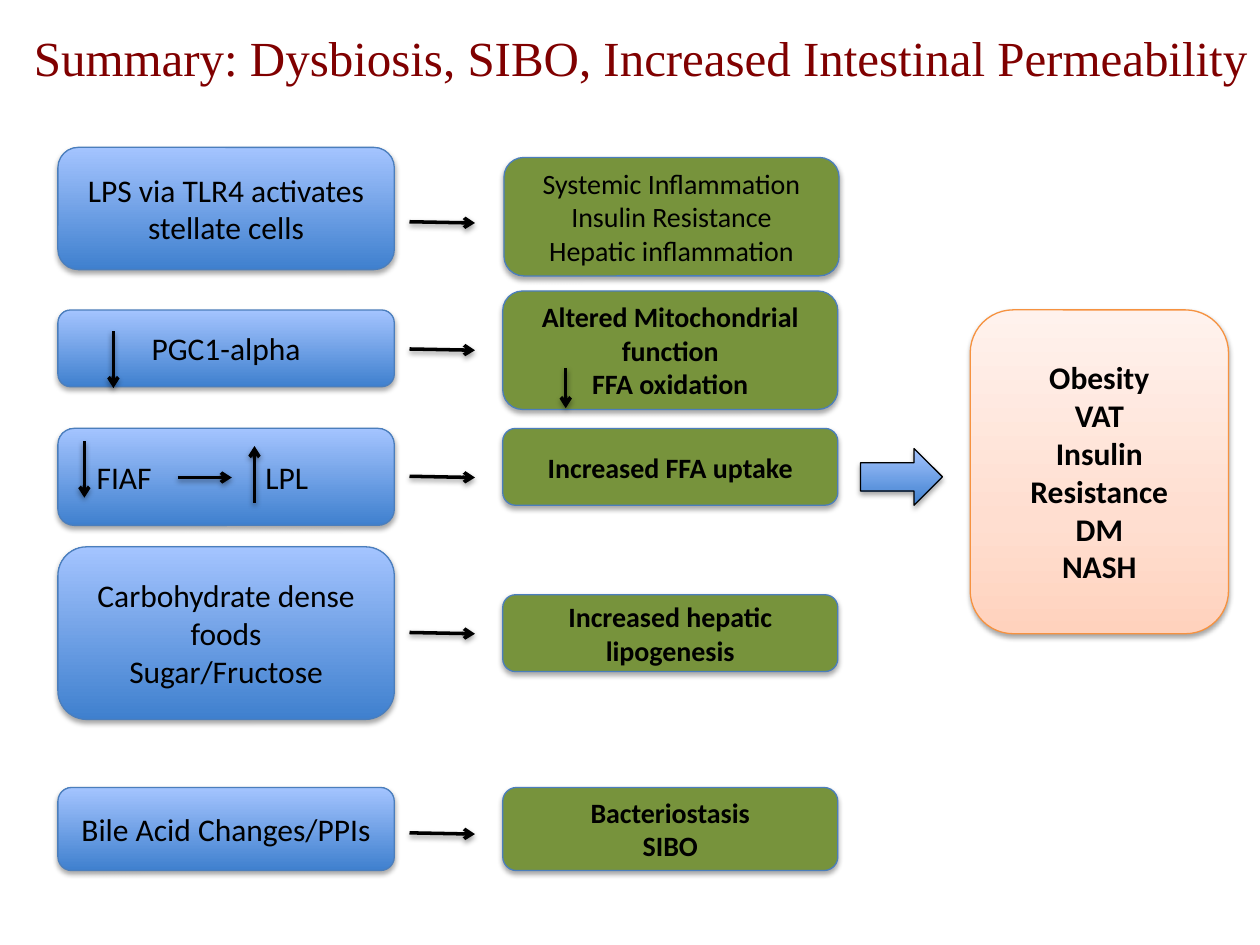
from dataclasses import dataclass

from lxml import etree
from pptx import Presentation
from pptx import util as u
from pptx.dml.color import RGBColor
from pptx.enum import shapes, text
from pptx.oxml import ns


@dataclass(frozen=True)
class Theme:
    black: str = "000000"
    title: str = "800000"
    green: str = "77933C"
    blue_line: str = "4B7EBC"
    orange_line: str = "F69240"
    blue_stops: tuple = ((0, "3F80CE"), (100, "A4C4FF"))
    peach_stops: tuple = ((0, "FFD2BD"), (35, "FFDED0"), (100, "FFF2ED"))
    title_font: str = "Times New Roman"
    body_font: str = "Calibri"
    title_size: int = 28
    large: int = 18
    small: int = 16


THEME = Theme()
CAUSE_LEFT, CAUSE_WIDTH = 0.46, 2.67
EFFECT_LEFT, EFFECT_WIDTH = 3.99, 2.66


def add_element(parent, tag, **attributes):
    element = etree.SubElement(parent, ns.qn(tag))
    for name, value in attributes.items():
        element.set(name, str(value))
    return element


def add_shadow(shape, distance=1.8, opacity=35):
    properties = shape._element.spPr
    for old in properties.findall(ns.qn("a:effectLst")):
        properties.remove(old)
    effects = add_element(properties, "a:effectLst")
    shadow = add_element(effects, "a:outerShdw", blurRad=u.Pt(3.1), dist=u.Pt(distance),
                         dir=90 * 60000, rotWithShape=0)
    color = add_element(shadow, "a:srgbClr", val=THEME.black)
    add_element(color, "a:alpha", val=opacity * 1000)


def paint(shape, fill, line):
    if isinstance(fill, str):
        shape.fill.solid()
        shape.fill.fore_color.rgb = RGBColor.from_string(fill)
    else:
        shape.fill.gradient()
        shape.fill.gradient_angle = 90
        stops = shape._element.spPr.find(".//" + ns.qn("a:gsLst"))
        for old in list(stops):
            stops.remove(old)
        for position, color in fill:
            stop = add_element(stops, "a:gs", pos=position * 1000)
            add_element(stop, "a:srgbClr", val=color)
    shape.line.color.rgb = RGBColor.from_string(line)
    shape.line.width = u.Pt(0.75)
    shape.shadow.inherit = False
    add_shadow(shape)


def write(frame, lines, size, bold=False, font=THEME.body_font, color=THEME.black,
          alignment=text.PP_ALIGN.CENTER):
    for index, line in enumerate(lines):
        paragraph = frame.add_paragraph() if index else frame.paragraphs[0]
        paragraph.alignment = alignment
        run = paragraph.add_run()
        run.text = line
        run.font.name = font
        run.font.size = u.Pt(size)
        run.font.bold = bold
        run.font.color.rgb = RGBColor.from_string(color)


def add_title(slide, title):
    placeholder = slide.shapes.title
    placeholder.left, placeholder.top = u.Inches(-0.33), u.Inches(0.17)
    placeholder.width, placeholder.height = u.Inches(10.83), u.Inches(0.57)
    frame = placeholder.text_frame
    frame.auto_size = text.MSO_AUTO_SIZE.NONE
    frame.vertical_anchor = text.MSO_ANCHOR.TOP
    write(frame, [title], THEME.title_size, font=THEME.title_font, color=THEME.title)


def add_block(slide, left, top, width, height, fill, line,
              kind=shapes.MSO_SHAPE.ROUNDED_RECTANGLE):
    shape = slide.shapes.add_shape(kind, u.Inches(left), u.Inches(top),
                                   u.Inches(width), u.Inches(height))
    paint(shape, fill, line)
    frame = shape.text_frame
    frame.word_wrap = True
    frame.vertical_anchor = text.MSO_ANCHOR.MIDDLE
    return frame


def add_cause(slide, top, height):
    return add_block(slide, CAUSE_LEFT, top, CAUSE_WIDTH, height,
                     THEME.blue_stops, THEME.blue_line)


def add_effect(slide, top, height, lines, bold=True, left=EFFECT_LEFT):
    frame = add_block(slide, left, top, EFFECT_WIDTH, height, THEME.green, THEME.blue_line)
    write(frame, lines, THEME.small, bold)


def add_tabbed_cause(slide, top, height, line):
    frame = add_cause(slide, top, height)
    frame.margin_left = u.Inches(0.27)
    tabs = add_element(frame.paragraphs[0]._p.get_or_add_pPr(), "a:tabLst")
    add_element(tabs, "a:tab", pos=u.Inches(1.34), algn="l")
    write(frame, [line], THEME.large, alignment=text.PP_ALIGN.LEFT)


def add_arrow(slide, x1, y1, x2, y2):
    connector = slide.shapes.add_connector(
        shapes.MSO_CONNECTOR.STRAIGHT,
        u.Inches(x1), u.Inches(y1), u.Inches(x2), u.Inches(y2))
    connector.line.color.rgb = RGBColor.from_string(THEME.black)
    connector.line.width = u.Pt(2)
    add_element(connector.line._get_or_add_ln(), "a:tailEnd", type="arrow")
    add_shadow(connector, 1.6, 38)


def main():
    presentation = Presentation()
    presentation.slide_width, presentation.slide_height = u.Inches(10), u.Inches(7.5)
    slide = presentation.slides.add_slide(presentation.slide_layouts[5])
    add_title(slide, "Summary: Dysbiosis, SIBO, Increased Intestinal Permeability")

    causes = [
        (1.17, 0.97, ["LPS via TLR4 activates stellate cells"]),
        (2.46, 0.61, ["PGC1-alpha"]),
        (4.34, 1.37, ["Carbohydrate dense foods", "Sugar/Fructose"]),
        (6.25, 0.66, ["Bile Acid Changes/PPIs"]),
    ]
    for top, height, lines in causes:
        write(add_cause(slide, top, height), lines, THEME.large)
    add_tabbed_cause(slide, 3.4, 0.77, "FIAF\tLPL")

    effects = [
        (2.31, 0.94, ["Altered Mitochondrial function", "FFA oxidation"]),
        (3.4, 0.61, ["Increased FFA uptake"]),
        (4.72, 0.61, ["Increased hepatic lipogenesis"]),
        (6.25, 0.66, ["Bacteriostasis", "SIBO"]),
    ]
    for top, height, lines in effects:
        add_effect(slide, top, height, lines)
    add_effect(slide, 1.25, 0.94, ["Systemic Inflammation", "Insulin Resistance",
                                   "Hepatic inflammation"], bold=False, left=4)

    for y in (1.76, 2.77, 3.78, 5.02, 6.61):
        add_arrow(slide, 3.25, y, 3.77, y + 0.01)
    for x, start, end in ((0.9, 2.63, 3.08), (0.67, 3.5, 3.95),
                          (2.02, 3.99, 3.54), (4.49, 2.92, 3.24)):
        add_arrow(slide, x, start, x, end)
    add_arrow(slide, 1.41, 3.79, 1.84, 3.79)

    add_block(slide, 6.83, 3.56, 0.65, 0.45, THEME.blue_stops, THEME.black,
              shapes.MSO_SHAPE.RIGHT_ARROW)
    outcome = add_block(slide, 7.7, 2.46, 2.05, 2.57, THEME.peach_stops, THEME.orange_line)
    write(outcome, ["Obesity", "VAT", "Insulin Resistance", "DM", "NASH"],
          THEME.large, bold=True)
    presentation.save("out.pptx")


if __name__ == "__main__":
    main()
